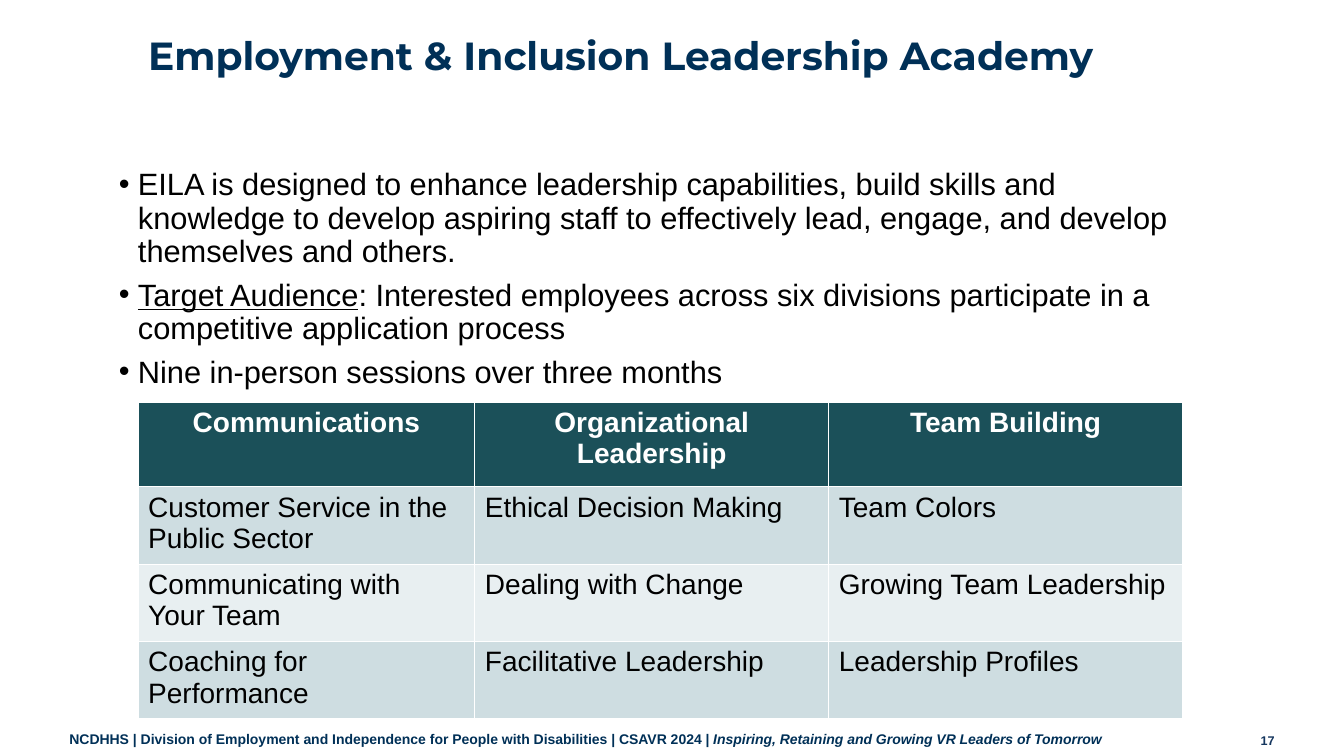
"""Build the Employment & Inclusion Leadership Academy slide."""
from lxml.etree import SubElement
from pptx import Presentation
from pptx.dml.color import RGBColor
from pptx.enum.text import MSO_ANCHOR as Anchor, MSO_AUTO_SIZE as AutoSize, PP_ALIGN as Align
from pptx.oxml.ns import qn
from pptx.util import Inches, Pt

WIDTH, HEIGHT = 13.33, 7.5
NAVY, BLACK, WHITE, TEAL = "003057", "000000", "FFFFFF", "1B5059"
BANDS = ("CEDDE1", "E8EFF1")

TITLE = "Employment & Inclusion Leadership Academy"
POINTS = [
    [("EILA is designed to enhance leadership capabilities, build skills and knowledge to "
      "develop aspiring staff to effectively lead, engage, and develop themselves and others.", {})],
    [("Target Audience", {"underline": True}),
     (": Interested employees across six divisions participate in a competitive application process", {})],
    [("Nine in-person sessions over three months", {})],
]
SESSIONS = [
    ("Communications", "Organizational Leadership", "Team Building"),
    ("Customer Service in the Public Sector", "Ethical Decision Making", "Team Colors"),
    ("Communicating with Your Team", "Dealing with Change", "Growing Team Leadership"),
    ("Coaching for Performance", "Facilitative Leadership", "Leadership Profiles"),
]
FOOTER = [
    ("NCDHHS | Division of Employment and Independence for People with Disabilities | CSAVR 2024 | ",
     {"bold": True}),
    ("Inspiring, Retaining and Growing VR Leaders of Tomorrow", {"bold": True, "italic": True}),
]
PAGE = [("17", {"bold": True})]

TITLE_AT = (1.37, 0.31, 10.88, 0.55)
POINTS_AT = (1.08, 1.63, 10.88, 5.33)
TABLE_AT = (1.37, 3.99)
FOOTER_AT = (0.59, 7.2, 11.77, 0.29)
PAGE_AT = (12.15, 7.22, 0.59, 0.3)
COLUMNS = (3.34, 3.51, 3.51)
HEADER_ROW, SESSION_ROW = 0.84, 0.72
INDENT = 0.19


def colour(code):
    """Return the colour for a hex string."""
    return RGBColor.from_string(code)


def style(run, size, code, face="Arial", **traits):
    """Set the font of a run."""
    font = run.font
    font.name, font.size, font.color.rgb = face, Pt(size), colour(code)
    for trait, value in traits.items():
        setattr(font, trait, value)


def write(paragraph, parts, size, code):
    """Add styled runs to a paragraph."""
    for wording, traits in parts:
        run = paragraph.add_run()
        run.text = wording
        style(run, size, code, **traits)


def add_box(slide, place):
    """Add a wrapping text box and return its text frame."""
    frame = slide.shapes.add_textbox(*map(Inches, place)).text_frame
    frame.word_wrap = True
    return frame


def add_bullet(paragraph):
    """Give a paragraph a hanging bullet."""
    props = paragraph._p.get_or_add_pPr()
    props.set("marL", str(Inches(INDENT)))
    props.set("indent", str(-Inches(INDENT)))
    SubElement(props, qn("a:buFont")).set("typeface", "Arial")
    SubElement(props, qn("a:buChar")).set("char", "•")


def add_title(slide):
    """Place and format the title."""
    title = slide.shapes.title
    title.left, title.top, title.width, title.height = map(Inches, TITLE_AT)
    frame = title.text_frame
    frame.text = TITLE
    frame.auto_size, frame.vertical_anchor = AutoSize.NONE, Anchor.TOP
    heading = frame.paragraphs[0]
    heading.alignment, heading.line_spacing = Align.LEFT, 0.9
    style(heading.runs[0], 28, NAVY, "Montserrat", bold=True)


def add_points(slide):
    """Add the bulleted list."""
    frame = add_box(slide, POINTS_AT)
    for number, parts in enumerate(POINTS):
        point = frame.add_paragraph() if number else frame.paragraphs[0]
        add_bullet(point)
        point.line_spacing = 0.9
        point.space_before = Pt(7.5 if number else 0)
        write(point, parts, 22, BLACK)


def add_sessions(slide):
    """Add the table of sessions."""
    heights = [HEADER_ROW] + [SESSION_ROW] * (len(SESSIONS) - 1)
    size = (sum(COLUMNS), sum(heights))
    table = slide.shapes.add_table(len(SESSIONS), len(COLUMNS),
                                   *map(Inches, TABLE_AT + size)).table
    for column, width in zip(table.columns, COLUMNS):
        column.width = Inches(width)
    for r, (names, height) in enumerate(zip(SESSIONS, heights)):
        table.rows[r].height = Inches(height)
        header = r == 0
        for c, name in enumerate(names):
            cell = table.cell(r, c)
            cell.fill.solid()
            cell.fill.fore_color.rgb = colour(TEAL if header else BANDS[(r - 1) % 2])
            entry = cell.text_frame.paragraphs[0]
            entry.alignment = Align.CENTER if header else Align.LEFT
            write(entry, [(name, {"bold": header})], 20, WHITE if header else BLACK)


def main():
    """Build and save the deck."""
    deck = Presentation()
    deck.slide_width, deck.slide_height = Inches(WIDTH), Inches(HEIGHT)
    slide = deck.slides.add_slide(deck.slide_layouts[5])
    add_title(slide)
    add_points(slide)
    add_sessions(slide)
    write(add_box(slide, FOOTER_AT).paragraphs[0], FOOTER, 10, NAVY)
    page = add_box(slide, PAGE_AT).paragraphs[0]
    page.alignment = Align.RIGHT
    write(page, PAGE, 9, "15365E")
    deck.save("out.pptx")


if __name__ == "__main__":
    main()
